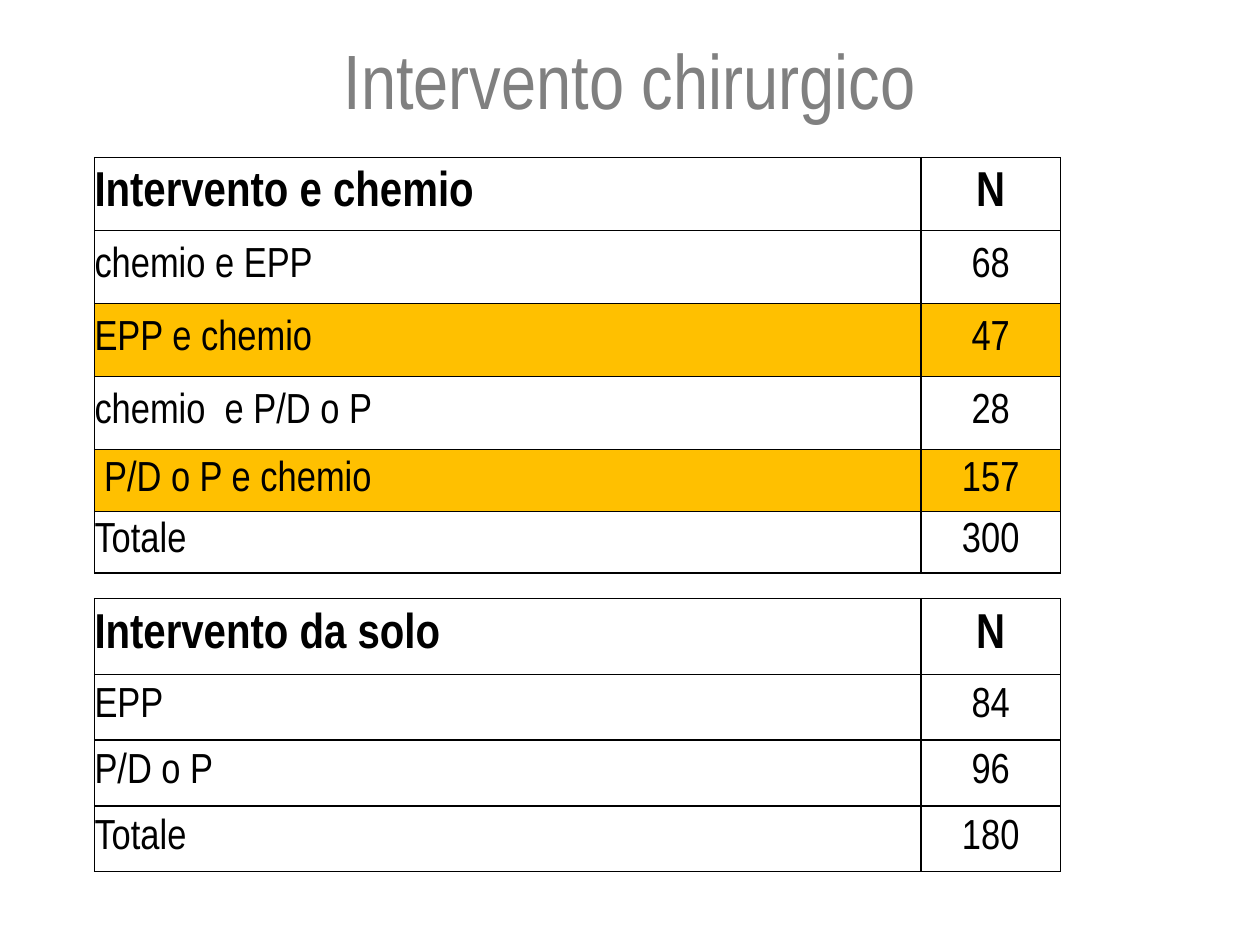
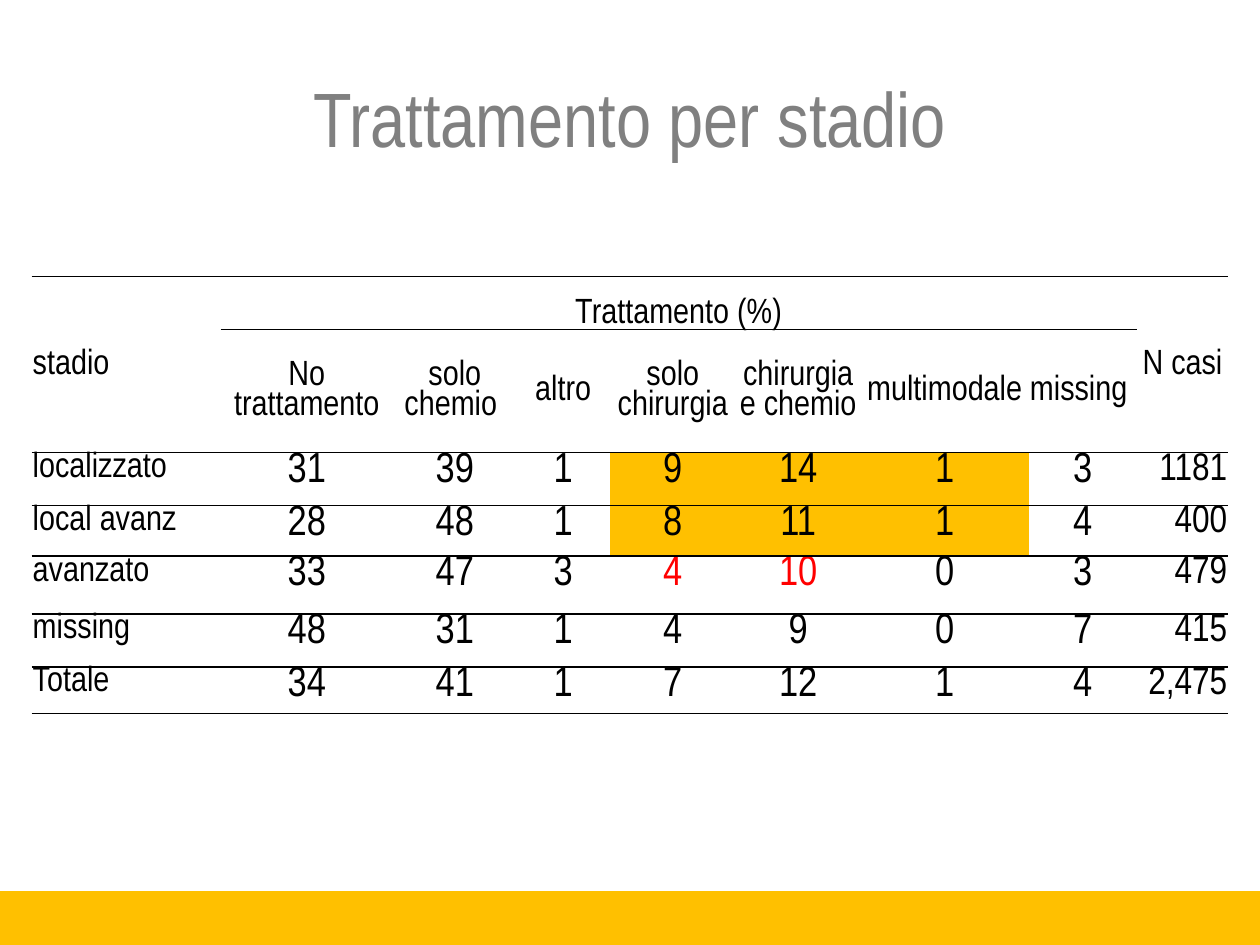
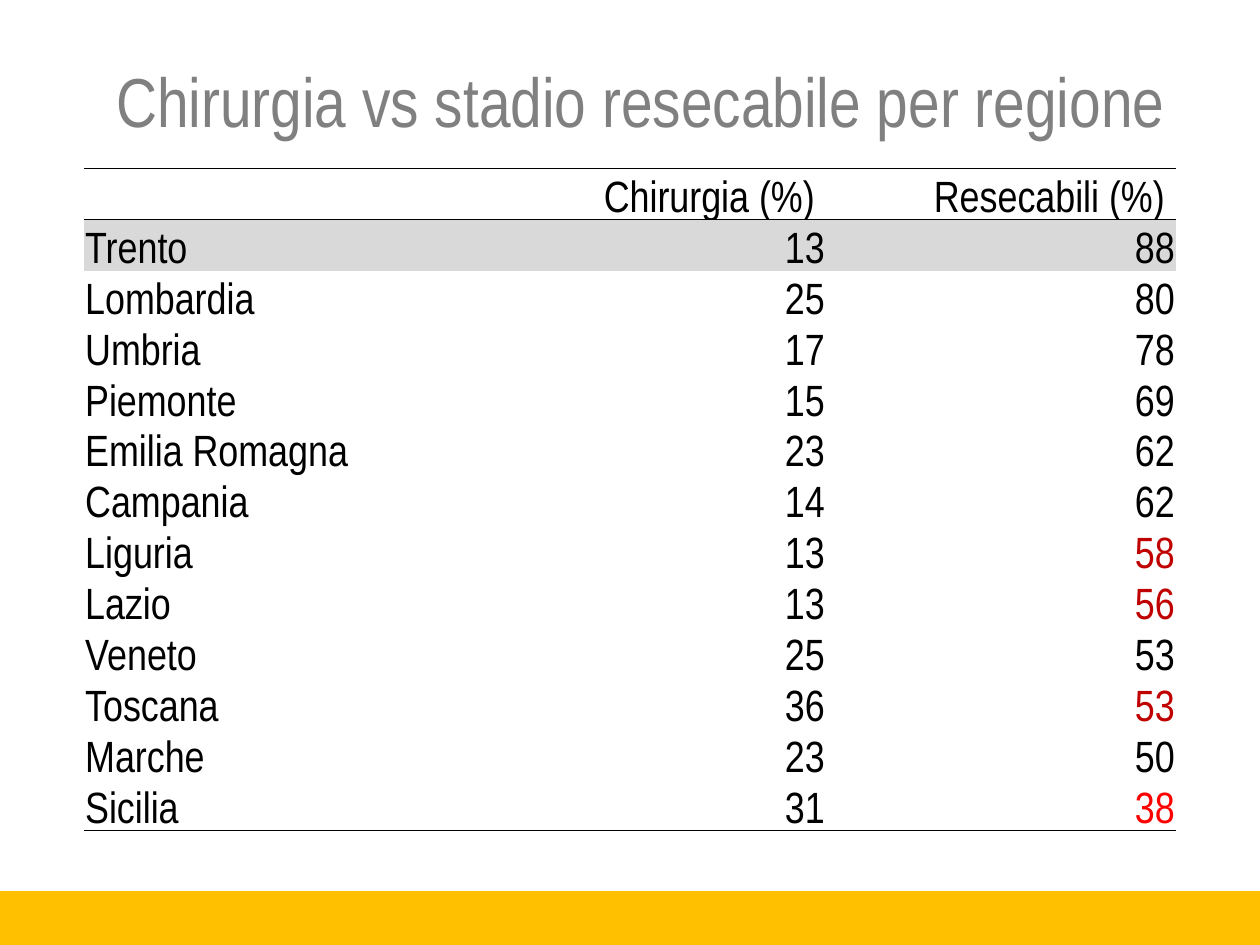
from dataclasses import dataclass

from lxml import etree
from pptx import Presentation
from pptx.dml.color import RGBColor
from pptx.enum.shapes import MSO_SHAPE
from pptx.enum.text import MSO_ANCHOR, PP_ALIGN
from pptx.oxml.ns import qn
from pptx.util import Pt

LEFT, CENTER, RIGHT = PP_ALIGN.LEFT, PP_ALIGN.CENTER, PP_ALIGN.RIGHT
TOP, MIDDLE, BOTTOM = MSO_ANCHOR.TOP, MSO_ANCHOR.MIDDLE, MSO_ANCHOR.BOTTOM
RECTANGLE = MSO_SHAPE.RECTANGLE


@dataclass(frozen=True)
class Theme:
    font: str = "Arial Narrow"
    ink: str = "000000"
    title: str = "808080"
    gold: str = "FFC000"
    grey: str = "D9D9D9"
    red: str = "FF0000"
    dark_red: str = "C00000"
    title_size: float = 44
    long_title_size: float = 39.6
    heading_size: float = 28
    figure_size: float = 24
    cases_size: float = 22
    label_size: float = 20
    region_size: float = 25


THEME = Theme()
TIGHT_INSETS = (0.72, 0.72, 0.72, 0)
THIN, NORMAL = 0.5, 1
TABLE_SPACING = 0.9


# Text
def write(frame, text, size, color=THEME.ink, align=LEFT, bold=False, spacing=TABLE_SPACING):
    paragraph = frame.paragraphs[0]
    paragraph.alignment = align
    paragraph.line_spacing = spacing
    run = paragraph.add_run()
    run.text = text
    run.font.name = THEME.font
    run.font.size = Pt(size)
    run.font.bold = bold
    run.font.color.rgb = RGBColor.from_string(color)


def add_title(slide, text, left, top, height, size=THEME.title_size):
    frame = slide.shapes.add_textbox(Pt(left), Pt(top), Pt(648), Pt(height)).text_frame
    frame.word_wrap = True
    frame.vertical_anchor = MIDDLE
    write(frame, text, size, THEME.title, CENTER, spacing=1.0)


# Band at the foot of the slide
def add_band(slide):
    band = slide.shapes.add_shape(RECTANGLE, Pt(0), Pt(510), Pt(720), Pt(30))
    band.shadow.inherit = False
    band.fill.solid()
    band.fill.fore_color.rgb = RGBColor.from_string(THEME.gold)
    band.line.color.rgb = RGBColor.from_string(THEME.gold)
    band.line.width = Pt(2)


# Tables
def add_grid(slide, left, top, widths, heights):
    table = slide.shapes.add_table(
        len(heights), len(widths), Pt(left), Pt(top), Pt(sum(widths)), Pt(sum(heights))
    ).table
    table.first_row = table.horz_banding = False
    for column, width in zip(table.columns, widths):
        column.width = Pt(width)
    for row, height in zip(table.rows, heights):
        row.height = Pt(height)
    return table


def format_cell(cell, insets, anchor, borders, fill=None):
    """borders maps L, R, T and B to widths; a missing side has no line."""
    cell.margin_left, cell.margin_top, cell.margin_right, cell.margin_bottom = map(Pt, insets)
    cell.vertical_anchor = anchor
    properties = cell._tc.get_or_add_tcPr()
    for side in "LRTB":
        width = borders.get(side, 0)
        edge = etree.SubElement(properties, qn(f"a:ln{side}"), w=str(Pt(width)))
        if width:
            paint = etree.SubElement(edge, qn("a:solidFill"))
            etree.SubElement(paint, qn("a:srgbClr"), val=THEME.ink)
        else:
            etree.SubElement(edge, qn("a:noFill"))
    if fill:
        cell.fill.solid()
        cell.fill.fore_color.rgb = RGBColor.from_string(fill)
    else:
        cell.fill.background()


def add_count_table(slide, top, heights, rows, highlighted=()):
    table = add_grid(slide, 54, top, (472.2, 79.8), heights)
    for r, row in enumerate(rows):
        heading = r == 0
        for c, text in enumerate(row):
            cell = table.cell(r, c)
            format_cell(cell, (0, 0, 0, 0), MIDDLE, dict.fromkeys("LRTB", NORMAL),
                        THEME.gold if r in highlighted else None)
            write(cell.text_frame, text,
                  THEME.heading_size if heading else THEME.figure_size,
                  align=CENTER if c else LEFT, bold=heading)


def add_stage_table(slide, treatments, stages):
    widths = (108, 98.6, 70.6, 53.3, 72, 71.3, 96.1, 61.7, 52.4)
    heights = (30.2, 70.6, 30.2, 28.8, 33.1, 30.2, 23.4)
    table = add_grid(slide, 18, 158, widths, heights)
    cases = len(widths) - 1
    rows = [["stadio", "Trattamento (%)"] + [""] * (cases - 2) + ["N casi"],
            ["", *treatments, ""], *stages]

    for r, row in enumerate(rows):
        header = r < 2
        for c, text in enumerate(row):
            cell = table.cell(r, c)
            borders = {"T": THIN if r in (0, 2) else NORMAL,
                       "B": THIN if r in (1, len(rows) - 1) or (r == 0 and c in (0, cases))
                       else NORMAL}
            surgery = r in (2, 3) and 4 <= c <= 6
            anchor = TOP
            if header:
                anchor = BOTTOM if (r, c) == (0, 1) else MIDDLE
            format_cell(cell, TIGHT_INSETS, anchor, borders, THEME.gold if surgery else None)
            if not text:
                continue
            size, align = THEME.figure_size, CENTER
            if c == 0:
                size, align = THEME.label_size, LEFT
            elif header:
                size = THEME.label_size
            elif c == cases:
                size, align = THEME.cases_size, RIGHT
            color = THEME.red if r == 4 and c in (4, 5) else THEME.ink
            write(cell.text_frame, text, size, color, align)

    for c in (0, cases):
        table.cell(0, c).merge(table.cell(1, c))
    table.cell(0, 1).merge(table.cell(0, cases - 1))


def add_region_table(slide, rows, accents):
    heights = [29.6] + [29.1] * (len(rows) - 1)
    table = add_grid(slide, 48, 96, (257, 167, 200), heights)
    for r, row in enumerate(rows):
        borders = {}
        if r < 2:
            borders["T"] = THIN
        if r in (0, len(rows) - 1):
            borders["B"] = THIN
        for c, text in enumerate(row):
            cell = table.cell(r, c)
            format_cell(cell, TIGHT_INSETS, BOTTOM, borders, THEME.grey if r == 1 else None)
            if text:
                color = accents.get(row[0], THEME.ink) if c == 2 else THEME.ink
                write(cell.text_frame, text, THEME.region_size, color, RIGHT if c else LEFT)


# Slides
def build_surgery(slide):
    add_title(slide, "Intervento chirurgico", 36, 0, 90)
    add_count_table(slide, 90, [41.7] * 4 + [35.4] * 2, [
        ("Intervento e chemio", "N"),
        ("chemio e EPP", "68"),
        ("EPP e chemio", "47"),
        ("chemio  e P/D o P", "28"),
        (" P/D o P e chemio", "157"),
        ("Totale", "300"),
    ], highlighted=(2, 4))
    add_count_table(slide, 342, [43.3] + [37.6] * 3, [
        ("Intervento da solo", "N"),
        ("EPP", "84"),
        ("P/D o P", "96"),
        ("Totale", "180"),
    ])


def build_stages(slide):
    add_title(slide, "Trattamento per stadio", 36, 21.6, 90)
    add_stage_table(
        slide,
        ("No trattamento", "solo chemio ", "altro", "solo chirurgia",
         "chirurgia e chemio ", "multimodale", "missing "),
        [
            ("localizzato", "31", "39", "1", "9", "14", "1", "3", "1181"),
            ("local avanz", "28", "48", "1", "8", "11", "1", "4", "400"),
            ("avanzato", "33", "47", "3", "4", "10", "0", "3", "479"),
            ("missing", "48", "31", "1", "4", "9", "0", "7", "415"),
            ("Totale", "34", "41", "1", "7", "12", "1", "4", "2,475"),
        ],
    )
    add_band(slide)


def build_regions(slide):
    add_title(slide, "Chirurgia vs stadio resecabile per regione", 42, 24, 66,
              THEME.long_title_size)
    add_region_table(slide, [
        ("", "Chirurgia (%) ", "Resecabili (%) "),
        ("Trento", "13", "88"),
        ("Lombardia", "25", "80"),
        ("Umbria", "17", "78"),
        ("Piemonte", "15", "69"),
        ("Emilia Romagna", "23", "62"),
        ("Campania", "14", "62"),
        ("Liguria", "13", "58"),
        ("Lazio", "13", "56"),
        ("Veneto", "25", "53"),
        ("Toscana", "36", "53"),
        ("Marche", "23", "50"),
        ("Sicilia", "31", "38"),
    ], {"Liguria": THEME.dark_red, "Lazio": THEME.dark_red,
        "Toscana": THEME.dark_red, "Sicilia": THEME.red})
    add_band(slide)


def main():
    deck = Presentation()
    deck.slide_width, deck.slide_height = Pt(720), Pt(540)
    blank = deck.slide_layouts[6]
    for build in (build_surgery, build_stages, build_regions):
        build(deck.slides.add_slide(blank))
    deck.save("out.pptx")


if __name__ == "__main__":
    main()
